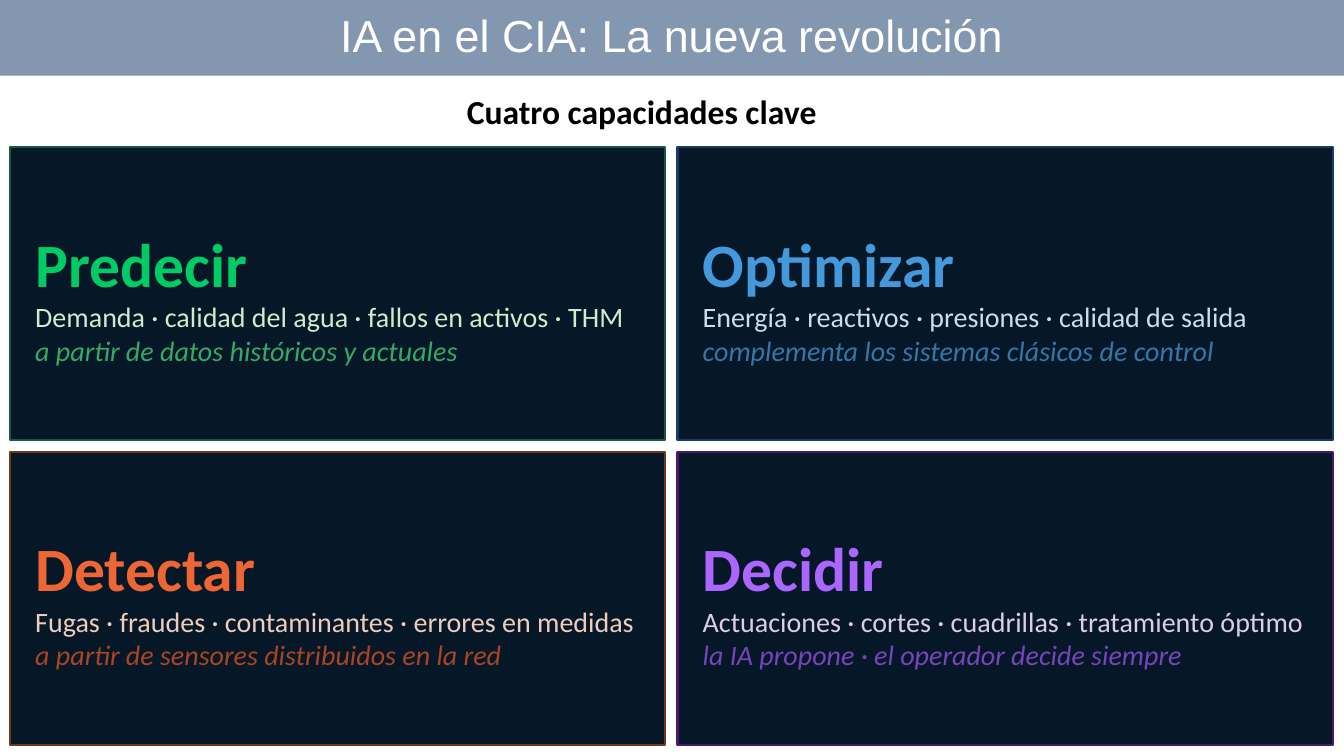
import pptx
import pptx.dml.color
import pptx.enum.shapes
import pptx.enum.text
import pptx.util

Inches = pptx.util.Inches
ALIGN = pptx.enum.text.PP_ALIGN

COLORS = {
    "banner": "8497B0",
    "white": "FFFFFF",
    "black": "000000",
    "panel": "061828",
    "predecir": ("1A5A3A", "00CC66", "CCEECC", "33AA66"),
    "optimizar": ("1A3A6A", "4499DD", "CCDDF0", "3377AA"),
    "detectar": ("6A3A1A", "EE6633", "F0CCBB", "AA4422"),
    "decidir": ("4A1A6A", "AA66FF", "DDCCF0", "7744BB"),
}

CAPABILITIES = [
    ("predecir", "Predecir",
     "Demanda · calidad del agua · fallos en activos · THM",
     "a partir de datos históricos y actuales"),
    ("optimizar", "Optimizar",
     "Energía · reactivos · presiones · calidad de salida",
     "complementa los sistemas clásicos de control"),
    ("detectar", "Detectar",
     "Fugas · fraudes · contaminantes · errores en medidas",
     "a partir de sensores distribuidos en la red"),
    ("decidir", "Decidir",
     "Actuaciones · cortes · cuadrillas · tratamiento óptimo",
     "la IA propone · el operador decide siempre"),
]


def rgb(value):
    return pptx.dml.color.RGBColor.from_string(value)


class CapabilitySlide:
    title_font = "Arial"
    body_font = "Calibri"

    def __init__(self, slide):
        self.slide = slide

    def add_text(self, paragraph, text, size, color, font=body_font, bold=False, italic=False,
                 align=ALIGN.LEFT):
        paragraph.alignment = align
        run = paragraph.add_run()
        run.text = text
        run.font.name = font
        run.font.size = pptx.util.Pt(size)
        run.font.bold = bold
        run.font.italic = italic
        run.font.color.rgb = rgb(color)

    def rectangle(self, left, top, width, height, fill, outline=None):
        box = self.slide.shapes.add_shape(
            pptx.enum.shapes.MSO_SHAPE.RECTANGLE,
            Inches(left), Inches(top), Inches(width), Inches(height))
        box.shadow.inherit = False
        box.fill.solid()
        box.fill.fore_color.rgb = rgb(fill)
        if outline:
            box.line.color.rgb = rgb(outline)
            box.line.width = pptx.util.Pt(1.5)
        else:
            box.line.fill.background()
        frame = box.text_frame
        frame.word_wrap = True
        frame.vertical_anchor = pptx.enum.text.MSO_ANCHOR.MIDDLE
        return frame

    def banner(self, text):
        heading = self.rectangle(0, 0, 13.33, 0.75, COLORS["banner"]).paragraphs[0]
        heading.line_spacing = 0.9
        self.add_text(heading, text, 32, COLORS["white"], self.title_font, align=ALIGN.CENTER)

    def subtitle(self, text):
        frame = self.slide.shapes.add_textbox(
            Inches(3.03), Inches(0.85), Inches(6.67), Inches(0.5)).text_frame
        frame.word_wrap = True
        frame.auto_size = pptx.enum.text.MSO_AUTO_SIZE.SHAPE_TO_FIT_TEXT
        self.add_text(frame.paragraphs[0], text, 24, COLORS["black"], bold=True,
                      align=ALIGN.CENTER)

    def capability(self, left, top, width, height, key, verb, scope, remark):
        outline, verb_color, scope_color, remark_color = COLORS[key]
        frame = self.rectangle(left, top, width, height, COLORS["panel"], outline)
        frame.margin_left = frame.margin_top = frame.margin_right = Inches(0.25)
        frame.margin_bottom = Inches(0.2)
        self.add_text(frame.paragraphs[0], verb, 44, verb_color, bold=True)
        self.add_text(frame.add_paragraph(), scope, 20, scope_color)
        self.add_text(frame.add_paragraph(), remark, 20, remark_color, italic=True)


def main():
    deck = pptx.Presentation()
    deck.slide_width = Inches(13.33)
    deck.slide_height = Inches(7.5)
    page = CapabilitySlide(deck.slides.add_slide(deck.slide_layouts[6]))

    page.banner("IA en el CIA: La nueva revolución")
    width, height = 6.5, 2.91
    for index, content in enumerate(CAPABILITIES):
        row, column = divmod(index, 2)
        page.capability(0.1 + column * (width + 0.12), 1.46 + row * (height + 0.11),
                        width, height, *content)
    page.subtitle("Cuatro capacidades clave")

    deck.save("out.pptx")


if __name__ == "__main__":
    main()
